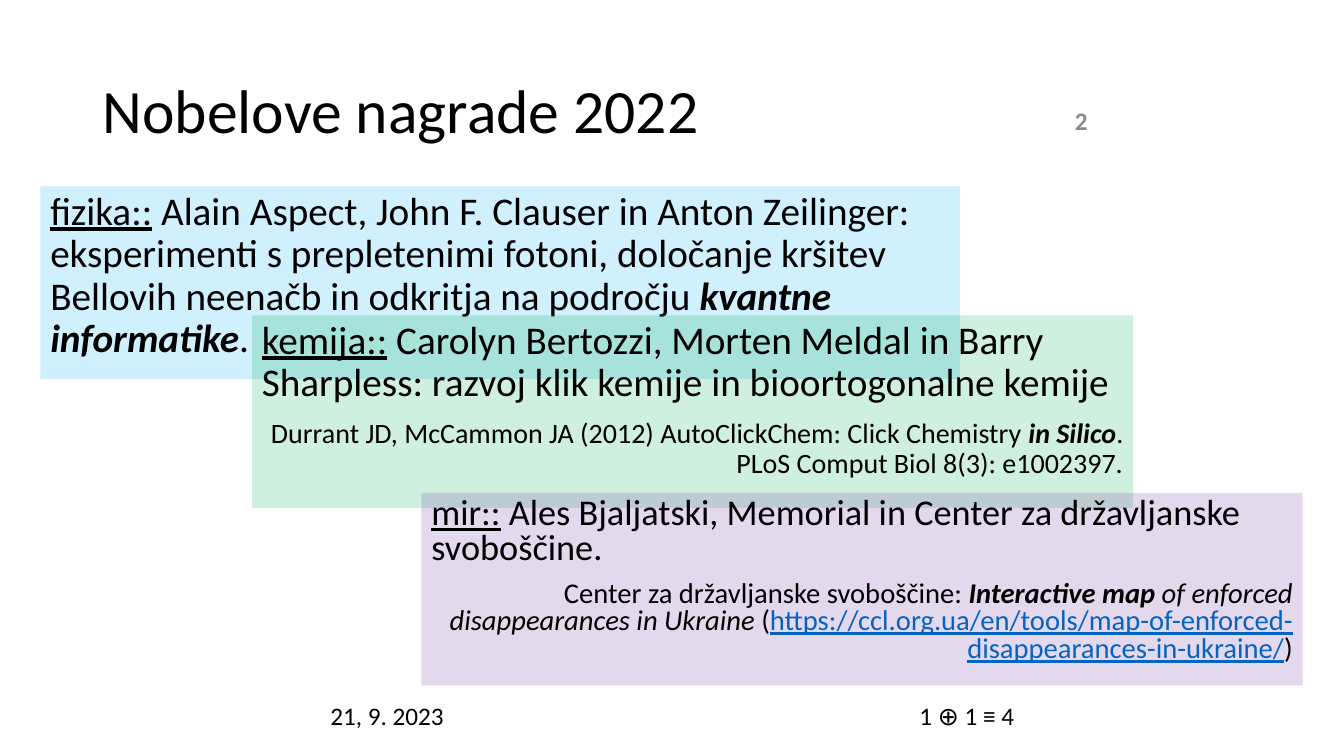
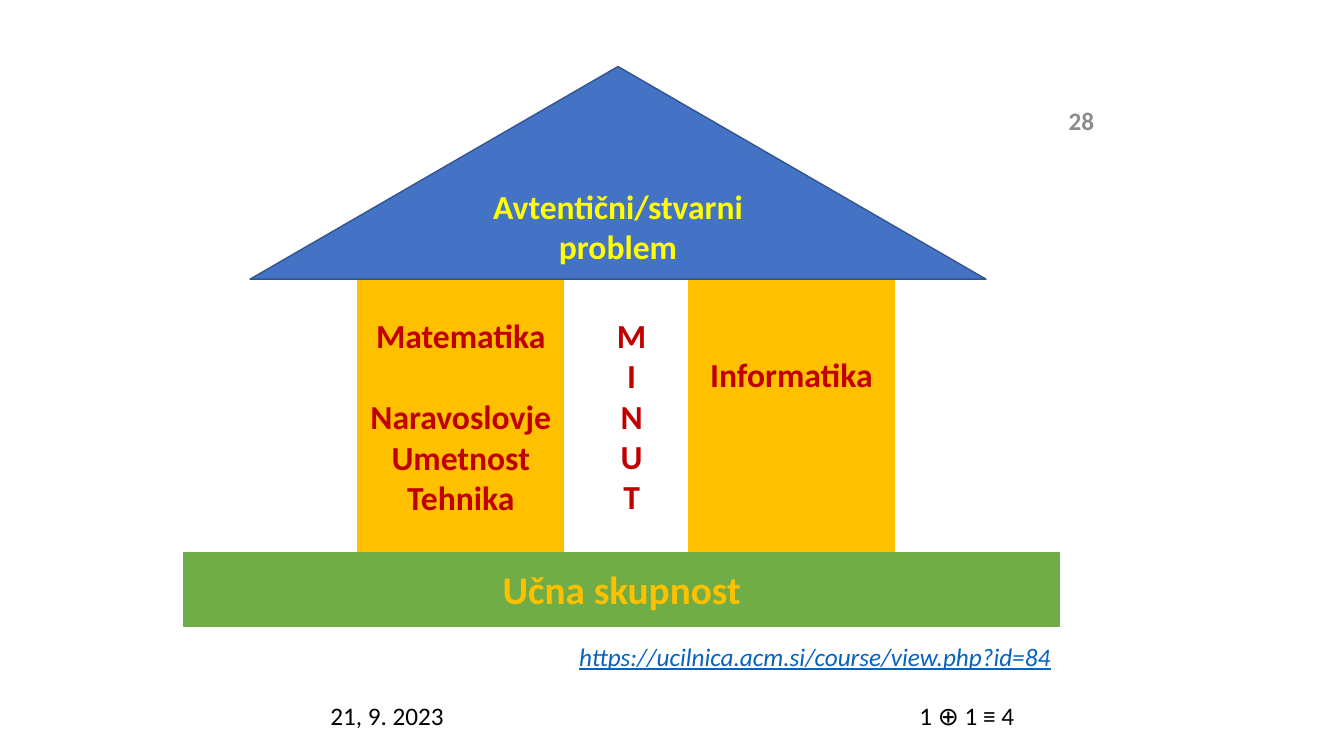
"""Build two slides: the 2022 Nobel prizes and the house of an authentic problem."""
from dataclasses import dataclass

from lxml import etree
from pptx import Presentation
from pptx.dml.color import RGBColor
from pptx.enum.shapes import MSO_SHAPE
from pptx.enum.text import MSO_ANCHOR, PP_ALIGN
from pptx.oxml.ns import qn
from pptx.util import Inches, Pt

RECTANGLE, TRIANGLE = MSO_SHAPE.RECTANGLE, MSO_SHAPE.ISOSCELES_TRIANGLE
TOP, MIDDLE = MSO_ANCHOR.TOP, MSO_ANCHOR.MIDDLE
LEFT, CENTER, RIGHT = PP_ALIGN.LEFT, PP_ALIGN.CENTER, PP_ALIGN.RIGHT


@dataclass(frozen=True)
class Theme:
    """Colours, font and type sizes."""
    font: str = "Calibri"
    ink: str = "000000"
    muted: str = "8C8C8C"
    link: str = "0563C1"
    physics: str = "00B0F0"
    chemistry: str = "00B050"
    peace: str = "7030A0"
    roof: str = "4472C4"
    roof_edge: str = "325491"
    roof_text: str = "FFFF00"
    pillar: str = "FFC000"
    pillar_text: str = "C00000"
    gap: str = "FFFFFF"
    base: str = "70AD47"
    title_size: float = 44
    large: float = 28
    label: float = 24
    small: float = 18


theme = Theme()


def add_block(page, at, shape_type=None, fill=None, edge=None, opacity=100):
    """Add a text box, or a filled shape when a shape type is given."""
    place = [Inches(length) for length in at]
    if shape_type is None:
        return page.shapes.add_textbox(*place)
    block = page.shapes.add_shape(shape_type, *place)
    block.shadow.inherit = False
    block.fill.solid()
    block.fill.fore_color.rgb = RGBColor.from_string(fill)
    if opacity < 100:
        colour = block.fill._xPr.find(".//" + qn("a:srgbClr"))
        etree.SubElement(colour, qn("a:alpha"), val=str(opacity * 1000))
    if edge:
        block.line.color.rgb = RGBColor.from_string(edge)
        block.line.width = Pt(1)
    else:
        block.line.fill.background()
    return block


def add_para(block, spans, size, colour=theme.ink, align=LEFT, anchor=TOP,
             bold=None, spacing=None, before=None):
    """Write one paragraph from (text, style) spans; style letters are b, i, u and l for link."""
    frame = block.text_frame
    frame.word_wrap = True
    frame.vertical_anchor = anchor
    para = frame.paragraphs[0] if not frame.text else frame.add_paragraph()
    para.alignment = align
    if spacing:
        para.line_spacing = spacing
    if before:
        para.space_before = Pt(before)
    para.font.name = theme.font
    para.font.size = Pt(size)
    para.font.bold = bold
    para.font.color.rgb = RGBColor.from_string(colour)
    for text, style in spans:
        span = para.add_run()
        span.text = text
        if "b" in style:
            span.font.bold = True
        if "i" in style:
            span.font.italic = True
        if "u" in style:
            span.font.underline = True
        if "l" in style:
            span.font.color.rgb = RGBColor.from_string(theme.link)


deck = Presentation()
deck.slide_width, deck.slide_height = Inches(13.33), Inches(7.5)

pages = []
for number in ("2", "28"):
    page = deck.slides.add_slide(deck.slide_layouts[6])
    add_para(add_block(page, (10.45, 0.99, 0.55, 0.4)), [(number, "")], theme.small,
             theme.muted, CENTER, MIDDLE, bold=True)
    add_para(add_block(page, (1.5, 6.9, 3, 0.4)), [("21, 9. 2023", "")], theme.small, align=RIGHT)
    add_para(add_block(page, (9.02, 6.9, 3.94, 0.4)), [("1 ⊕ 1 ≡ 4", "")], theme.small)
    pages.append(page)
prizes, house = pages

add_para(add_block(prizes, (0.92, 0.4, 8.6, 1.45)), [("Nobelove nagrade 2022", "")],
         theme.title_size, anchor=MIDDLE, spacing=0.9)

prize_panels = [
    ((0.4, 1.85, 9.12, 1.91), theme.physics, 0.9, theme.large, [
        ("fizika::", "u"),
        (" Alain Aspect, John F. Clauser in Anton Zeilinger: eksperimenti s prepletenimi fotoni, "
         "določanje kršitev Bellovih neenačb in odkritja na področju ", ""),
        ("kvantne informatike", "bi"),
        (".", "")], None, []),
    ((2.5, 3.13, 8.74, 1.91), theme.chemistry, 0.9, theme.large, [
        ("kemija::", "u"),
        (" Carolyn Bertozzi, Morten Meldal in Barry Sharpless: "
         "razvoj klik kemije in bioortogonalne kemije", "")], 20, [
        ("Durrant JD, McCammon JA (2012) AutoClickChem: Click Chemistry ", ""),
        ("in Silico", "bi"),
        (". PLoS Comput Biol 8(3): e1002397.", "")]),
    ((4.18, 4.89, 8.74, 1.91), theme.peace, 0.8, 25.9, [
        ("mir::", "u"),
        (" Ales Bjaljatski, Memorial in Center za državljanske svoboščine.", "")], 20.4, [
        ("Center za državljanske svoboščine: ", ""),
        ("Interactive map", "bi"),
        (" of enforced disappearances in Ukraine", "i"),
        (" (", ""),
        ("https://ccl.org.ua/en/tools/map-of-enforced-disappearances-in-ukraine/", "ul"),
        (")", "")]),
]
for at, fill, spacing, size, winners, source_size, source in prize_panels:
    panel = add_block(prizes, at, RECTANGLE, fill, opacity=19)
    add_para(panel, winners, size, spacing=spacing)
    if source:
        add_para(panel, source, source_size, align=RIGHT, spacing=spacing, before=10)

pillar_top, pillar_height, line_height = 2.77, 2.71, 0.41
pillars = [
    (6.83, 2.04, theme.pillar, ["Informatika"], 2),
    (5.98, 0.57, theme.gap, list("MINUT"), 0),
    (3.55, 2.04, theme.pillar, ["Matematika", "Naravoslovje", "Umetnost", "Tehnika"], 0),
]
for left, width, fill, lines, lines_below in pillars:
    pillar = add_block(house, (left, pillar_top, width, pillar_height), RECTANGLE, fill, fill)
    pillar.text_frame.margin_bottom = Inches(0.05 + lines_below * line_height)
    for line in lines:
        before = line_height * 72 if line == "Naravoslovje" else None
        add_para(pillar, [(line, "")], theme.label, theme.pillar_text, CENTER, MIDDLE,
                 bold=True, before=before)

roof = add_block(house, (2.48, 0.66, 7.3, 2.11), TRIANGLE, theme.roof, theme.roof_edge)
roof.adjustments[0] = 0.5
for line in ("Avtentični/stvarni", "problem"):
    add_para(roof, [(line, "")], theme.label, theme.roof_text, CENTER, MIDDLE, bold=True)

base = add_block(house, (1.82, pillar_top + pillar_height, 8.69, 0.73), RECTANGLE,
                 theme.base, theme.base)
add_para(base, [("Učna skupnost", "")], theme.large, theme.pillar, CENTER, MIDDLE, bold=True)
add_para(add_block(house, (3.85, 6.31, 6.67, 0.4)),
         [("https://ucilnica.acm.si/course/view.php?id=84", "iu")],
         theme.small, theme.link, RIGHT)

deck.save("out.pptx")
